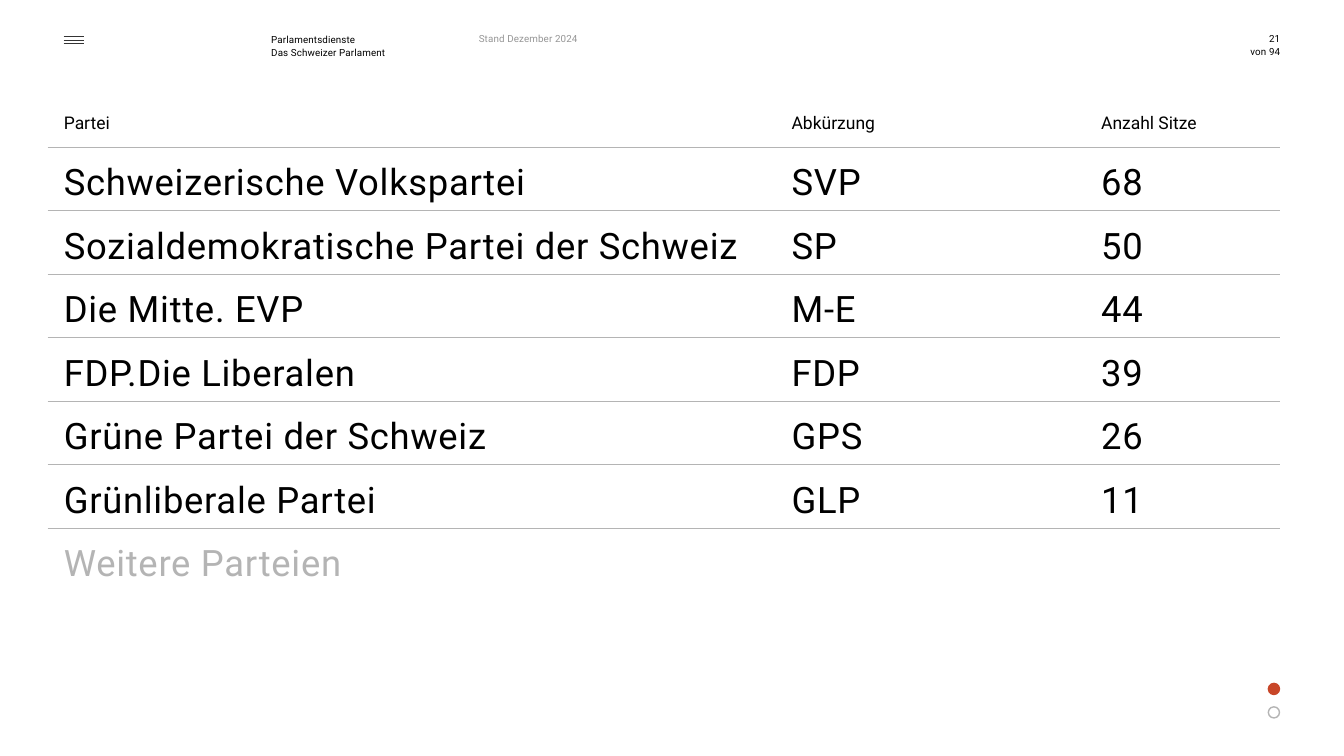
import pptx
import pptx.dml.color
import pptx.enum.shapes
import pptx.enum.text
import pptx.oxml
import pptx.oxml.ns
import pptx.util

BLACK, GREY, DARK, MUTED, RED = "000000", "B4B4B4", "343434", "969696", "C84628"
PARTIES = [
    ("Schweizerische Volkspartei", "SVP", "68"),
    ("Sozialdemokratische Partei der Schweiz", "SP", "50"),
    ("Die Mitte. EVP", "M-E", "44"),
    ("FDP.Die Liberalen", "FDP", "39"),
    ("Grüne Partei der Schweiz", "GPS", "26"),
    ("Grünliberale Partei", "GLP", "11"),
    ("Weitere Parteien", "", ""),
]
HEADINGS = ("Partei", "Abkürzung", "Anzahl Sitze")
NO_STYLE = "{2D5ABB26-0587-4C30-8999-92F81FD0307C}"


def colour(value):
    return pptx.dml.color.RGBColor.from_string(value)


def set_all(target, values):
    for name, value in values.items():
        setattr(target, name, value)


class SlideBuilder:
    """Draws styled elements on a slide, placed in percent of its width and height."""

    font_name = "Roboto"

    def __init__(self, presentation):
        self.slide = presentation.slides.add_slide(presentation.slide_layouts[6])
        self.column = presentation.slide_width / 100
        self.row = presentation.slide_height / 100

    def place(self, left, top, width, height):
        sizes = (left * self.column, top * self.row, width * self.column, height * self.row)
        return [round(size) for size in sizes]

    def fill_paragraph(self, paragraph, text, size, text_colour, tracking, **layout):
        set_all(paragraph, layout)
        run = paragraph.add_run()
        run.text = text
        set_all(run.font, {"name": self.font_name, "size": pptx.util.Pt(size)})
        run.font.color.rgb = colour(text_colour)
        run._r.get_or_add_rPr().set("spc", str(round(tracking * 100)))

    def text(self, place, lines, text_colour=BLACK, **layout):
        frame = self.slide.shapes.add_textbox(*self.place(*place)).text_frame
        margins = dict.fromkeys(("margin_left", "margin_top", "margin_right", "margin_bottom"), 0)
        set_all(frame, {"word_wrap": True, **margins})
        for index, line in enumerate(lines):
            paragraph = frame.add_paragraph() if index else frame.paragraphs[0]
            self.fill_paragraph(paragraph, line, 7, text_colour, 0.1, **layout)

    def line(self, left, right, top):
        ends = self.place(left, top, right, top)
        connector = self.slide.shapes.add_connector(pptx.enum.shapes.MSO_CONNECTOR.STRAIGHT, *ends)
        connector.line.color.rgb = colour(DARK)
        connector.line.width = pptx.util.Pt(0.4)
        connector._element.spPr.append(pptx.oxml.parse_xml(
            f'<a:effectLst {pptx.oxml.ns.nsdecls("a")}/>'))

    def dot(self, place, line_colour, filled):
        shape = self.slide.shapes.add_shape(pptx.enum.shapes.MSO_SHAPE.OVAL, *self.place(*place))
        shape.shadow.inherit = False
        shape.line.color.rgb = colour(line_colour)
        shape.line.width = pptx.util.Pt(1)
        if filled:
            shape.fill.solid()
            shape.fill.fore_color.rgb = colour(line_colour)
        else:
            shape.fill.background()

    def underline(self, cell):
        cell._tc.get_or_add_tcPr().insert(0, pptx.oxml.parse_xml(
            f'<a:lnB {pptx.oxml.ns.nsdecls("a")} w="{pptx.util.Pt(0.5)}">'
            f'<a:solidFill><a:srgbClr val="{GREY}"/></a:solidFill></a:lnB>'))

    def table(self, left, top, widths, heights, rows):
        place = self.place(left, top, sum(widths), sum(heights))
        frame = self.slide.shapes.add_table(len(rows), len(widths), *place)
        table = frame.table
        set_all(table, {"first_row": False, "horz_banding": False})
        table._tbl.tblPr.find(pptx.oxml.ns.qn("a:tableStyleId")).text = NO_STYLE
        for column, width in zip(table.columns, widths):
            column.width = round(width * self.column)
        for row, height in zip(table.rows, heights):
            row.height = round(height * self.row)
        last = len(rows) - 1
        for row_index, texts in enumerate(rows):
            margins = (0.16, 0.12, 0.08, 0) if row_index else (0.16, 0.05, 0.1, 0.05)
            sides = ("margin_left", "margin_top", "margin_right", "margin_bottom")
            values = {side: pptx.util.Inches(margin) for side, margin in zip(sides, margins)}
            for column_index, text in enumerate(texts):
                cell = table.cell(row_index, column_index)
                set_all(cell, values)
                cell.fill.background()
                if row_index < last:
                    self.underline(cell)
                paragraph = cell.text_frame.paragraphs[0]
                if text and row_index:
                    text_colour = GREY if row_index == last else BLACK
                    self.fill_paragraph(paragraph, text, 26, text_colour, 0.5, line_spacing=1.07)
                elif text:
                    self.fill_paragraph(paragraph, text, 12.5, BLACK, 0)


def main():
    presentation = pptx.Presentation()
    presentation.slide_width = pptx.util.Inches(13.33)
    presentation.slide_height = pptx.util.Inches(7.5)
    builder = SlideBuilder(presentation)
    right = pptx.enum.text.PP_ALIGN.RIGHT

    for index in range(3):
        builder.line(4.73, 6.23, 4.8 + index * 0.47)
    builder.text((20.18, 4.27, 9.75, 3.47),
                 ["Parlamentsdienste", "Das Schweizer Parlament"], line_spacing=1.1)
    builder.text((35.63, 4.27, 9.08, 1.6), ["Stand Dezember 2024"], MUTED)
    for top, label in ((4.27, "21"), (6, "von 94")):
        builder.text((91.95, top, 3.3, 1.6), [label], alignment=right)

    builder.table(3.55, 14.27, (54.15, 23.03, 14.48), [5.2] + [8.4] * len(PARTIES),
                  [HEADINGS, *PARTIES])

    for top, line_colour, filled in ((90.4, RED, True), (93.5, GREY, False)):
        builder.dot((94.37, top, 0.83, 1.47), line_colour, filled)

    presentation.save("out.pptx")


if __name__ == "__main__":
    main()
